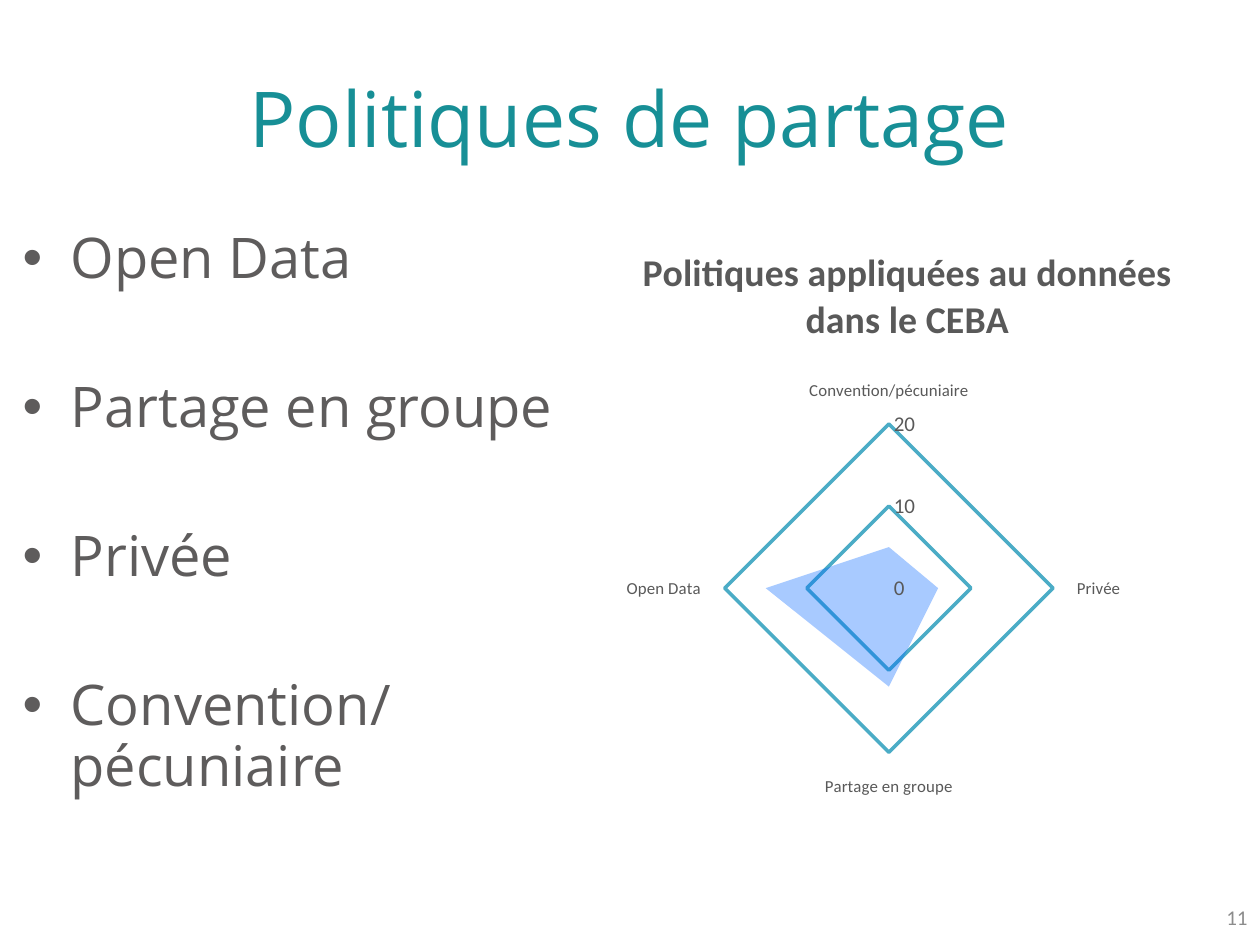
"""Build the slide on data sharing policies with its filled radar chart."""
from lxml.etree import SubElement
from pptx import Presentation
from pptx.chart.data import CategoryChartData
from pptx.dml.color import RGBColor
from pptx.enum.chart import XL_CHART_TYPE, XL_TICK_MARK
from pptx.enum.text import MSO_ANCHOR, MSO_AUTO_SIZE, PP_ALIGN
from pptx.oxml.ns import qn
from pptx.util import Inches, Pt


def style(font, size, color, name="Calibri", bold=False):
    font.size, font.name, font.bold = Pt(size), name, bold
    font.color.rgb = RGBColor.from_string(color)


def set_layout(parent, **settings):
    manual = SubElement(parent.find(qn("c:layout")), qn("c:manualLayout"))
    for tag, value in settings.items():
        SubElement(manual, qn(f"c:{tag}")).set("val", str(value))


prs = Presentation()
prs.slide_width, prs.slide_height = Inches(10), Inches(7.5)
slide = prs.slides.add_slide(prs.slide_layouts[1])

heading = slide.shapes.title
heading.left, heading.top = Inches(0.5), Inches(0.3)
heading.width, heading.height = Inches(9), Inches(1.25)
heading.text_frame.text = "Politiques de partage"
heading.text_frame.vertical_anchor = MSO_ANCHOR.MIDDLE
heading.text_frame.paragraphs[0].alignment = PP_ALIGN.CENTER
style(heading.text_frame.paragraphs[0].runs[0].font, 44, "178F96", "Open Sans")

policies = slide.placeholders[1]
policies.left, policies.top = Inches(0.08), Inches(1.78)
policies.width, policies.height = Inches(5.11), Inches(5.48)
policies.text_frame.auto_size = MSO_AUTO_SIZE.NONE
policies.text_frame.text = "Open Data\nPartage en groupe\nPrivée\nConvention/pécuniaire"
for position, policy in enumerate(policies.text_frame.paragraphs):
    properties = policy._p.get_or_add_pPr()
    properties.set("marL", str(Inches(0.38)))
    properties.set("indent", str(Inches(-0.38)))
    SubElement(properties, qn("a:buFont")).set("typeface", "Arial")
    SubElement(properties, qn("a:buChar")).set("char", "•")
    policy.line_spacing = 0.9
    policy.space_before = Pt(50.5 if position else 0)
    style(policy.runs[0].font, 32, "5E5C5C", "Open Sans")

usage = CategoryChartData()
usage.categories = ["Convention/pécuniaire", "Privée", "Partage en groupe", "Open Data"]
usage.add_series("Series 1", [5, 6, 12, 15])
radar = slide.shapes.add_chart(
    XL_CHART_TYPE.RADAR_FILLED, Inches(4.34), Inches(1.65), Inches(5.43), Inches(4.83), usage
).chart
style(radar.font, 10, "000000")
radar.has_legend = False
radar.has_title = True
radar_title = radar.chart_title.text_frame
radar_title.text = "Politiques appliquées au données dans le CEBA"
style(radar_title.paragraphs[0].runs[0].font, 21.6, "595959", bold=True)
set_layout(radar.chart_title._element, xMode="edge", yMode="edge", x=0.13, y=0.05)
set_layout(radar._chartSpace.chart.plotArea, layoutTarget="inner", xMode="edge",
           yMode="edge", x=0.26, y=0.33, w=0.48, h=0.59)

for axis, size in ((radar.category_axis, 9.6), (radar.value_axis, 12)):
    axis.major_tick_mark = axis.minor_tick_mark = XL_TICK_MARK.NONE
    style(axis.tick_labels.font, size, "595959")
radar.category_axis.has_major_gridlines = False
radar.category_axis.format.line.color.rgb = RGBColor.from_string("D9D9D9")
radar.category_axis.format.line.width = Pt(1)

scale = radar.value_axis
scale.minimum_scale, scale.maximum_scale, scale.major_unit = 0, 20, 10
scale.format.line.fill.background()
scale.has_major_gridlines = True
scale.major_gridlines.format.line.color.rgb = RGBColor.from_string("4BACC6")
scale.major_gridlines.format.line.width = Pt(2)

area = radar.plots[0].series[0].format
area.fill.solid()
area.fill.fore_color.rgb = RGBColor.from_string("0066FF")
area.line.fill.background()
for tint in radar.plots[0].series[0]._element.iter(qn("a:srgbClr")):
    SubElement(tint, qn("a:alpha")).set("val", "34000")

page = slide.shapes.add_textbox(Inches(7.75), Inches(7.08), Inches(2.25), Inches(0.4)).text_frame
page.word_wrap = True
page.vertical_anchor = MSO_ANCHOR.MIDDLE
page.text = "11"
page.paragraphs[0].alignment = PP_ALIGN.RIGHT
style(page.paragraphs[0].runs[0].font, 12, "8C8C8C")

prs.save("out.pptx")
